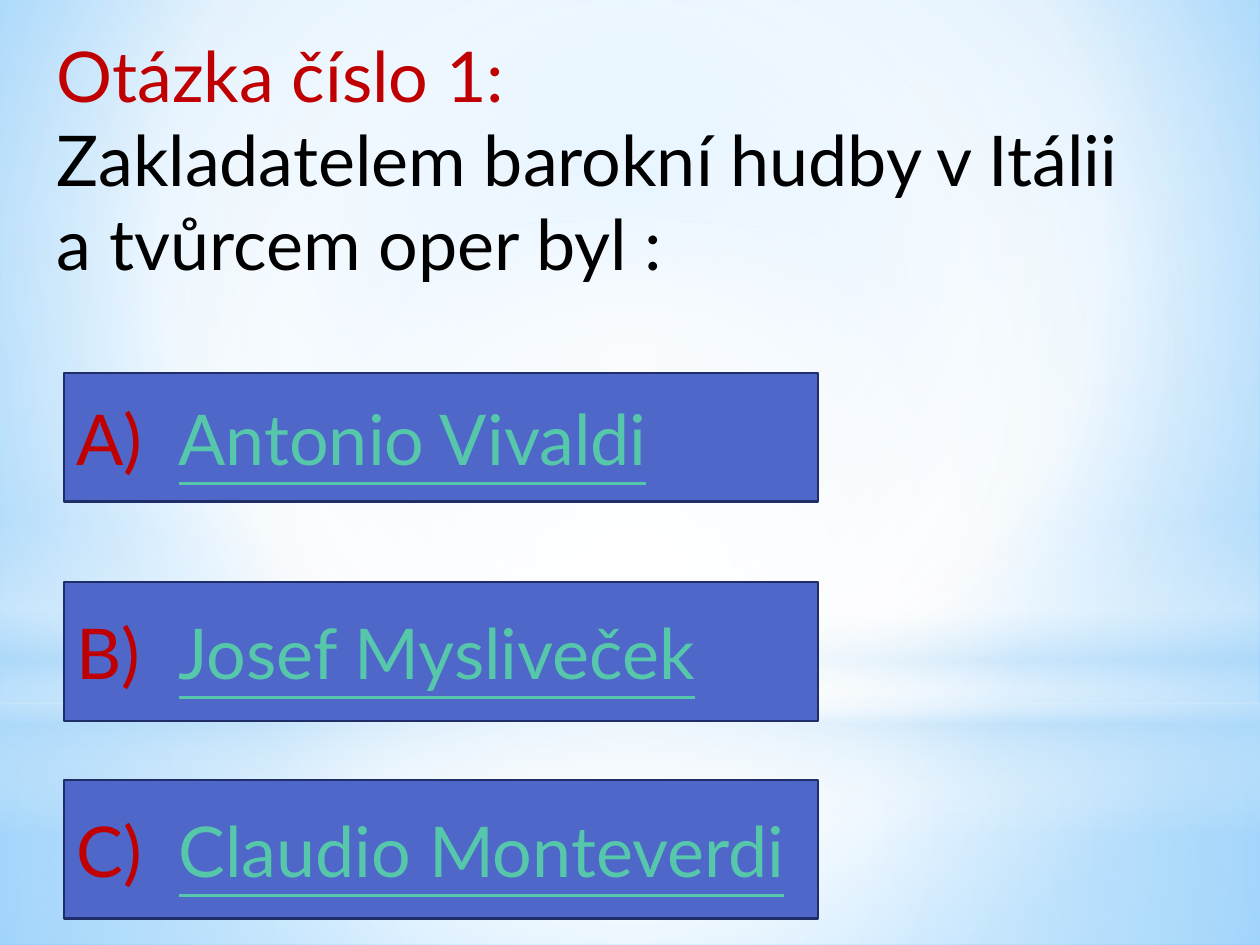
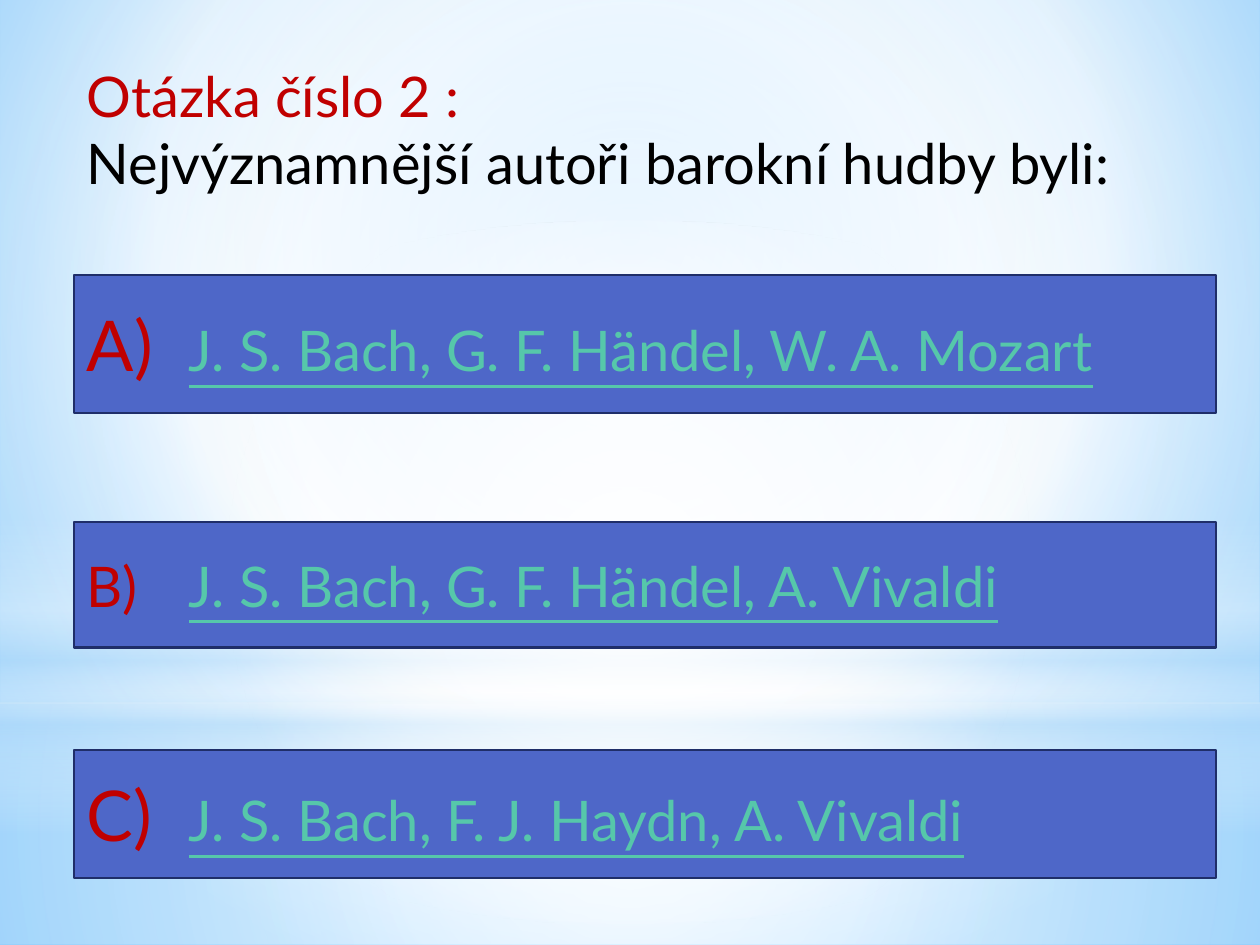
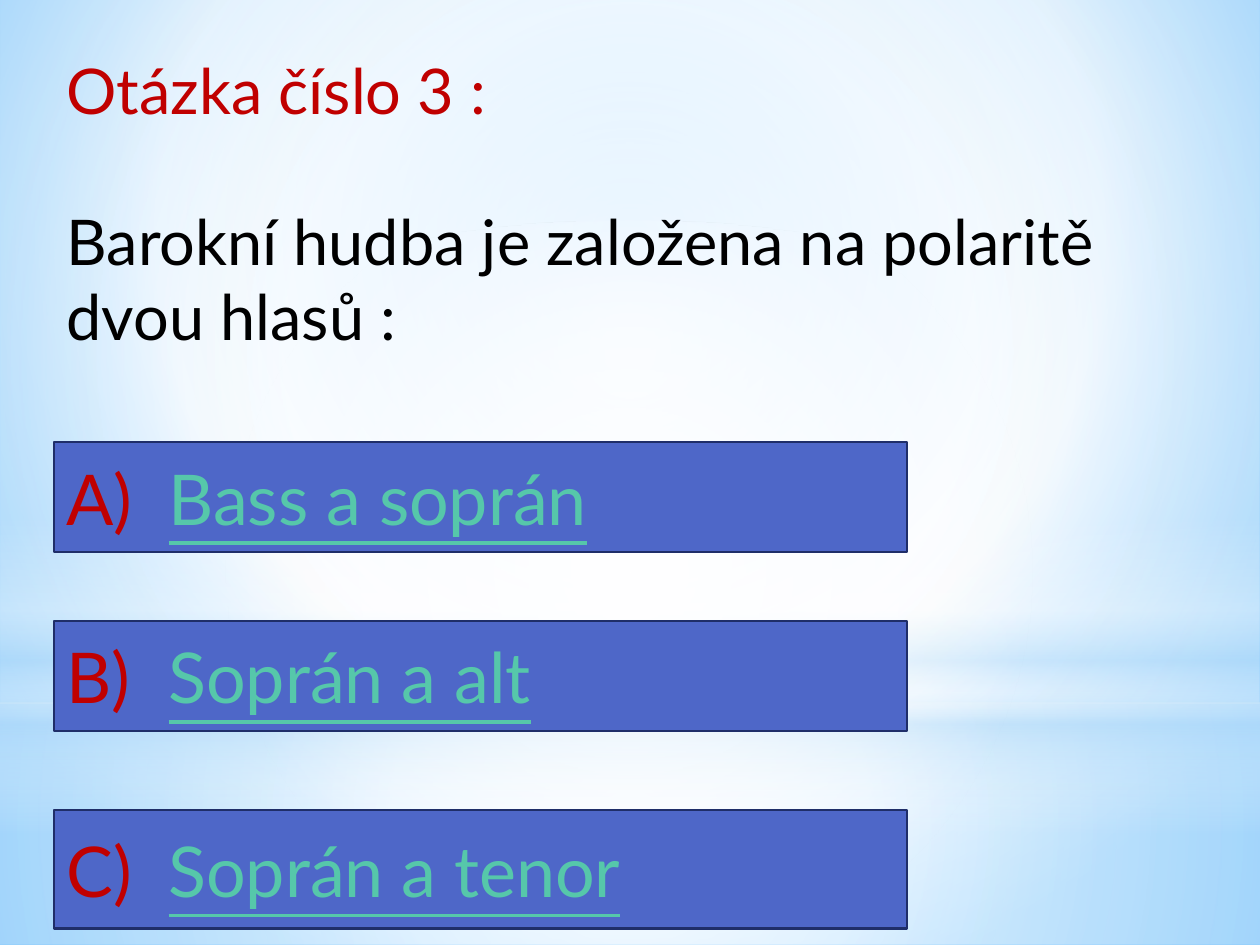
from lxml import etree
from pptx import Presentation
from pptx.dml.color import RGBColor
from pptx.enum.shapes import MSO_SHAPE
from pptx.enum.text import MSO_ANCHOR, MSO_AUTO_SIZE, PP_ALIGN
from pptx.oxml.ns import qn
from pptx.util import Inches, Pt

RECT = MSO_SHAPE.RECTANGLE
OVAL = MSO_SHAPE.OVAL
LEFT = PP_ALIGN.LEFT
MIDDLE = MSO_ANCHOR.MIDDLE
GROW = MSO_AUTO_SIZE.SHAPE_TO_FIT_TEXT

FONT = "Lato"
RED = RGBColor(0xC0, 0x00, 0x00)
BLACK = RGBColor(0x00, 0x00, 0x00)
BLUE = RGBColor(0x4E, 0x67, 0xC8)
NAVY = RGBColor(0x1F, 0x2E, 0x69)
GREEN = RGBColor(0x56, 0xC7, 0xAA)
WHITE = RGBColor(0xFF, 0xFF, 0xFF)
PALE = RGBColor(0xB4, 0xDC, 0xFA)
SKY = RGBColor(0x9E, 0xD5, 0xFF)
AZURE = RGBColor(0x5B, 0xB9, 0xFF)

CENTER = (50, 50, 50, 50)
GLOWS = [
    (RECT, 5.58, 1.92, [(0, WHITE, 91), (37, WHITE, 76), (100, PALE, 79)], CENTER),
    (RECT, 0, 5.58, [(0, WHITE, 89), (48, WHITE, 62), (100, PALE, 79)], CENTER),
    (RECT, 4.12, 2.5, [(0, WHITE, 0), (29, WHITE, 30), (45, PALE, 40),
                       (55, WHITE, 26), (65, PALE, 60), (100, WHITE, 0)], None),
    (OVAL, 1.75, 5.58, [(0, WHITE, 100), (56, WHITE, 0)], CENTER),
]

QUIZ = [
    {"head": "Otázka číslo 1:",
     "lines": ["Zakladatelem barokní hudby v Itálii", "a tvůrcem oper byl :"],
     "size": 40, "gap": 0, "text": (0.35, 0.21, 9.11, 2.12),
     "left": 0.51, "width": 5.98,
     "picks": [("A)", 40, "Antonio Vivaldi", 40, 2.96, 1.02),
               ("B)", 40, "Josef Mysliveček", 40, 4.62, 1.1),
               ("C)", 40, "Claudio Monteverdi", 40, 6.19, 1.1)]},
    {"head": "Otázka číslo 2 :",
     "lines": ["Nejvýznamnější autoři barokní hudby byli:"],
     "size": 32, "gap": 0, "text": (0.59, 0.44, 9.06, 1.18),
     "left": 0.59, "width": 9.06,
     "picks": [("A)", 40, "J. S. Bach, G. F. Händel, W. A. Mozart", 32, 2.18, 1.1),
               ("B)", 32, "J. S. Bach, G. F. Händel, A. Vivaldi", 32, 4.14, 1),
               ("C)", 40, "J. S. Bach, F. J. Haydn, A. Vivaldi", 32, 5.95, 1.02)]},
    {"head": "Otázka číslo 3 :",
     "lines": ["Barokní hudba je založena na polaritě", "dvou hlasů :"],
     "size": 36, "gap": 43, "text": (0.43, 0.36, 9.21, 2.52),
     "left": 0.43, "width": 6.77,
     "picks": [("A)", 40, "Bass a soprán", 40, 3.51, 0.87),
               ("B)", 40, "Soprán a alt", 40, 4.93, 0.87),
               ("C)", 40, "Soprán a tenor", 40, 6.43, 0.94)]},
]


def write(para, text, size=40, color=BLACK, under=None):
    run = para.add_run()
    run.text = text
    run.font.name = FONT
    run.font.size = Pt(size)
    run.font.color.rgb = color
    run.font.underline = under


def shade(props, stops, focus=None):
    grad = etree.Element(qn("a:gradFill"), rotWithShape="1")
    group = etree.SubElement(grad, qn("a:gsLst"))
    for pos, color, alpha in stops:
        stop = etree.SubElement(group, qn("a:gs"), pos=str(pos * 1000))
        tint = etree.SubElement(stop, qn("a:srgbClr"), val=str(color))
        if alpha < 100:
            etree.SubElement(tint, qn("a:alpha"), val=str(alpha * 1000))
    if focus:
        ring = etree.SubElement(grad, qn("a:path"), path="circle")
        sides = {side: str(part * 1000) for side, part in zip("ltrb", focus)}
        etree.SubElement(ring, qn("a:fillToRect"), **sides)
    else:
        etree.SubElement(grad, qn("a:lin"), ang="5400000", scaled="0")
    props.replace(props.find(qn("a:solidFill")), grad)


prs = Presentation()
prs.slide_width = Inches(10)
prs.slide_height = Inches(7.5)
blank = prs.slide_layouts[6]
slides = [prs.slides.add_slide(blank) for _ in QUIZ]

master = prs.slide_master
master.background.fill.solid()
master.background.fill.fore_color.rgb = WHITE
shade(master.element.find(".//" + qn("p:bgPr")),
      [(0, SKY, 100), (60, WHITE, 100), (100, AZURE, 100)], (20, 10, 20, 60))

for index, (kind, top, height, stops, focus) in enumerate(GLOWS):
    glow = slides[0].shapes.add_shape(kind, 0, Inches(top), Inches(10), Inches(height))
    glow.shadow.inherit = False
    glow.line.fill.background()
    glow.fill.solid()
    glow.fill.fore_color.rgb = WHITE
    shade(glow.element.spPr, stops, focus)
    glow.element.nvSpPr.cNvPr.set("id", str(100 + index))
    master.shapes.element.append(glow.element)

for slide, quiz in zip(slides, QUIZ):
    box = slide.shapes.add_textbox(*map(Inches, quiz["text"]))
    frame = box.text_frame
    frame.word_wrap = True
    frame.auto_size = GROW
    write(frame.paragraphs[0], quiz["head"], size=quiz["size"], color=RED)
    for index, line in enumerate(quiz["lines"]):
        para = frame.add_paragraph()
        if index == 0:
            para.space_before = Pt(quiz["gap"])
        write(para, line, size=quiz["size"])

    for mark, big, name, size, top, height in quiz["picks"]:
        card = slide.shapes.add_shape(RECT, Inches(quiz["left"]), Inches(top),
                                      Inches(quiz["width"]), Inches(height))
        card.shadow.inherit = False
        card.fill.solid()
        card.fill.fore_color.rgb = BLUE
        card.line.color.rgb = NAVY
        card.line.width = Pt(1.25)
        card.text_frame.vertical_anchor = MIDDLE
        para = card.text_frame.paragraphs[0]
        para.alignment = LEFT
        tabs = etree.SubElement(para._p.get_or_add_pPr(), qn("a:tabLst"))
        etree.SubElement(tabs, qn("a:tab"), pos=str(Inches(0.81)), algn="l")
        write(para, mark + "\t", size=big, color=RED)
        write(para, name, size=size, color=GREEN, under=True)

prs.save("out.pptx")
